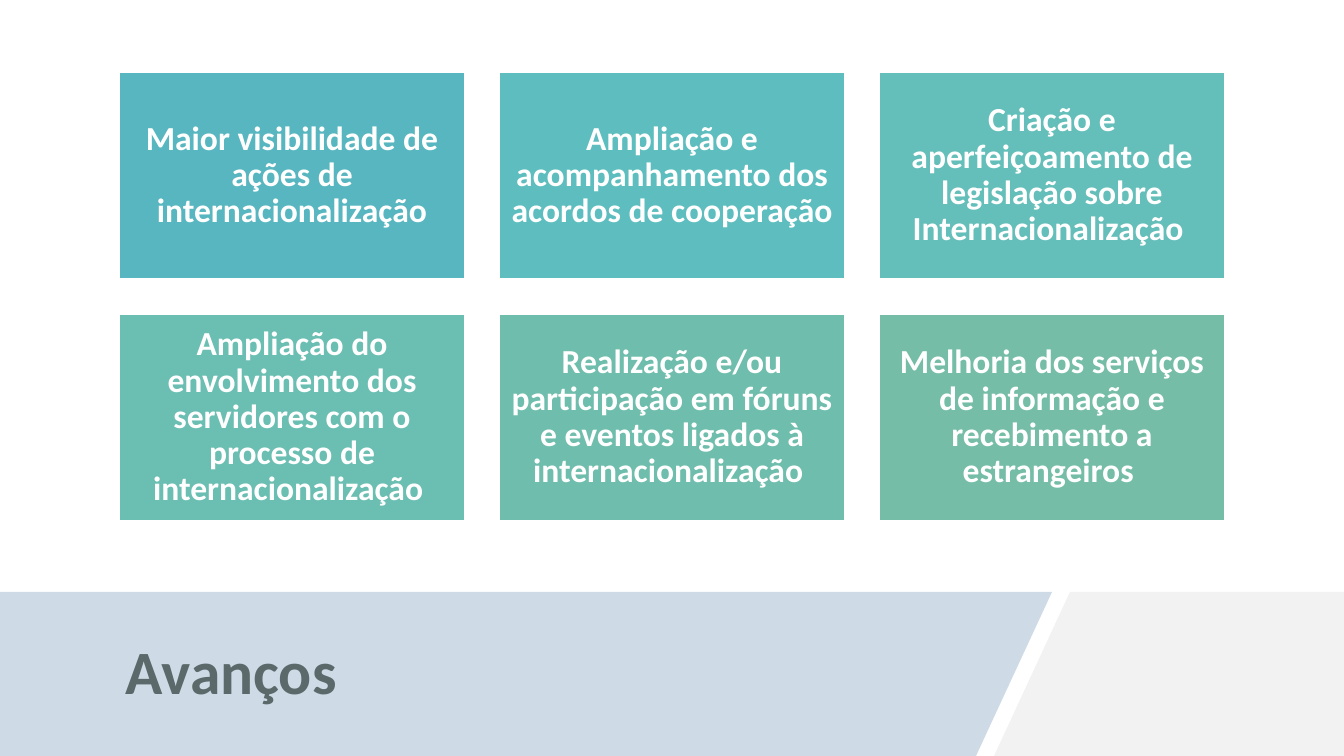
from pptx import Presentation
from pptx.dml.color import RGBColor
from pptx.enum.shapes import MSO_SHAPE as Shape
from pptx.enum.text import MSO_ANCHOR as Anchor, PP_ALIGN as Align
from pptx.util import Emu, Pt

WIDTH, HEIGHT = 1344, 756
SCALE = 914400 / 100.8


def px(length):
    """Turn a length in px into EMU."""
    return Emu(round(length * SCALE))


def color(code):
    """Turn a hex string into a colour."""
    return RGBColor.from_string(code)


class SlideBuilder:
    """Draws elements on one slide in a shared style."""

    font = "Calibri"
    white = "FFFFFF"
    line_spacing = 0.9

    def __init__(self, slide):
        """Keep the slide to draw on."""
        self.slide = slide

    def set_text(self, shape, text, size, code, align, insets):
        """Fill a shape with one bold, vertically centred paragraph."""
        frame = shape.text_frame
        frame.word_wrap = True
        frame.vertical_anchor = Anchor.MIDDLE
        frame.margin_left = frame.margin_right = px(insets[0])
        frame.margin_top = frame.margin_bottom = px(insets[1])
        paragraph = frame.paragraphs[0]
        paragraph.alignment = align
        paragraph.line_spacing = self.line_spacing
        run = paragraph.add_run()
        run.text = text
        run.font.name = self.font
        run.font.size = Pt(size)
        run.font.bold = True
        run.font.color.rgb = color(code)

    def band(self, points, fill):
        """Draw a borderless polygon."""
        builder = self.slide.shapes.build_freeform(*points[0], scale=SCALE)
        builder.add_line_segments(points[1:], close=True)
        shape = builder.convert_to_shape()
        shape.shadow.inherit = False
        shape.fill.solid()
        shape.fill.fore_color.rgb = color(fill)
        shape.line.fill.background()

    def title(self, text, left, top, width, height):
        """Add the slide title."""
        shape = self.slide.shapes.add_textbox(px(left), px(top), px(width), px(height))
        self.set_text(shape, text, 44, "5B696B", Align.LEFT, (10, 5))

    def card(self, text, fill, left, top, width, height):
        """Draw a coloured card with centred text."""
        shape = self.slide.shapes.add_shape(
            Shape.RECTANGLE, px(left), px(top), px(width), px(height))
        shape.shadow.inherit = False
        shape.fill.solid()
        shape.fill.fore_color.rgb = color(fill)
        shape.line.color.rgb = color(self.white)
        shape.line.width = Pt(1)
        self.set_text(shape, text, 24, self.white, Align.CENTER, (10, 10))


CARDS = [
    ("Maior visibilidade de ações de internacionalização", "58B6C0"),
    ("Ampliação e acompanhamento dos acordos de cooperação ", "5EBEBF"),
    ("Criação e aperfeiçoamento de legislação sobre Internacionalização ", "64BEB9"),
    ("Ampliação do envolvimento dos servidores com o processo de "
     "internacionalização ", "6ABEB2"),
    ("Realização e/ou participação em fóruns e eventos ligados à "
     "internacionalização ", "6FBDAC"),
    ("Melhoria dos serviços de informação e recebimento a estrangeiros ", "75BDA7"),
]
COLUMNS = 3
CARD_LEFT, CARD_TOP = 119, 72
CARD_WIDTH, CARD_HEIGHT = 346, 207
COLUMN_STEP, ROW_STEP = 380, 242
BAND_TOP = 592


def main():
    """Build and save the presentation."""
    presentation = Presentation()
    presentation.slide_width = px(WIDTH)
    presentation.slide_height = px(HEIGHT)
    builder = SlideBuilder(presentation.slides.add_slide(presentation.slide_layouts[6]))

    builder.band([(1070, BAND_TOP), (WIDTH, BAND_TOP), (WIDTH, HEIGHT), (994, HEIGHT)],
                 "F2F2F2")
    builder.band([(0, BAND_TOP), (1052, BAND_TOP), (976, HEIGHT), (0, HEIGHT)],
                 "CEDBE6")
    builder.title("Avanços", 116, 614, 890, 121)
    for index, (text, fill) in enumerate(CARDS):
        row, column = divmod(index, COLUMNS)
        builder.card(text, fill, CARD_LEFT + column * COLUMN_STEP,
                     CARD_TOP + row * ROW_STEP, CARD_WIDTH, CARD_HEIGHT)

    presentation.save("out.pptx")


if __name__ == "__main__":
    main()
